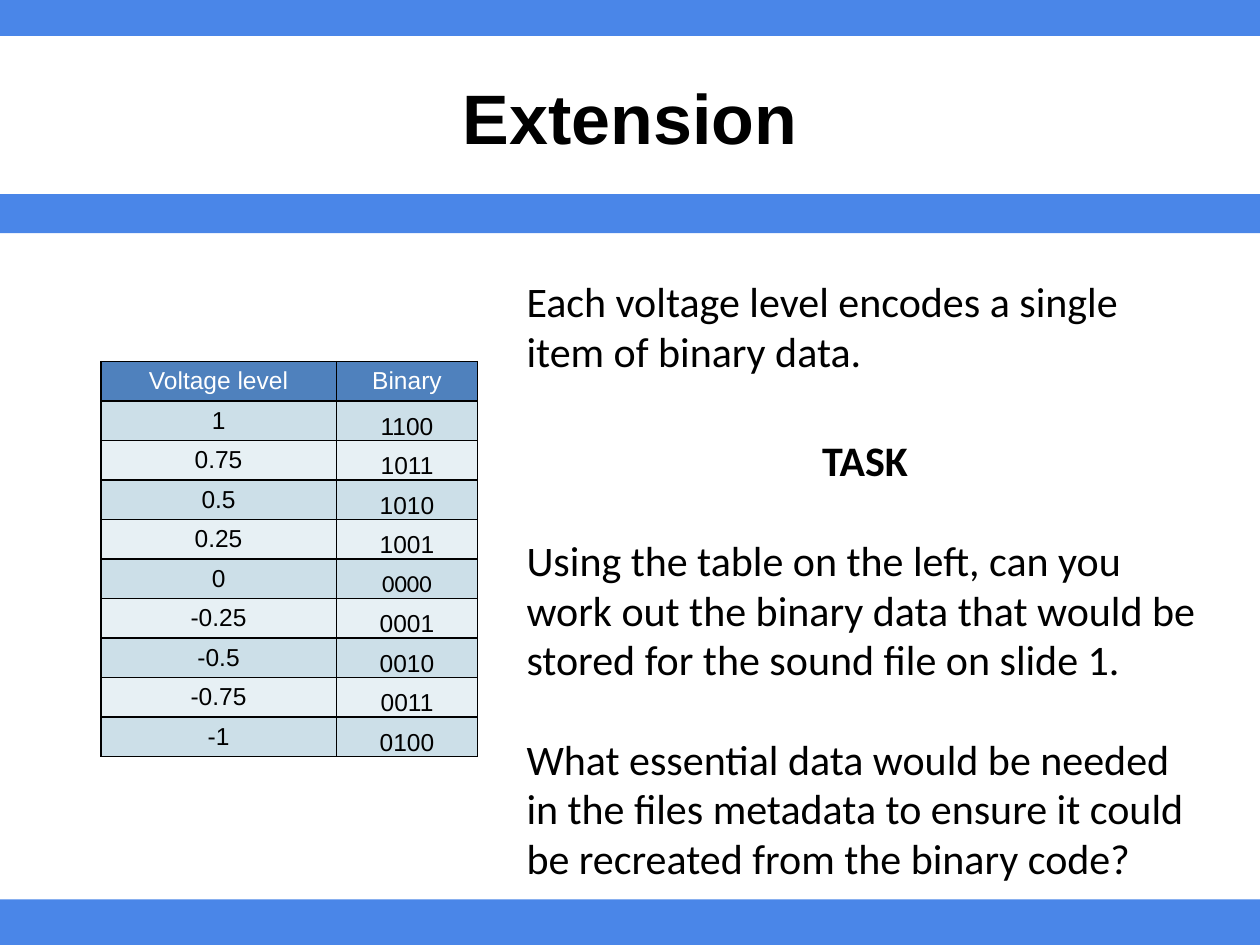
from lxml.etree import SubElement
from pptx import Presentation
from pptx.dml.color import RGBColor
from pptx.enum.shapes import MSO_SHAPE
from pptx.enum.text import MSO_ANCHOR, PP_ALIGN
from pptx.oxml.ns import qn
from pptx.util import Pt

BLUE = RGBColor(0x4A, 0x86, 0xE8)
HEAD = RGBColor(0x4F, 0x81, 0xBD)
DARK = RGBColor(0xCC, 0xDF, 0xE8)
PALE = RGBColor(0xE7, 0xF0, 0xF4)
WHITE = RGBColor(0xFF, 0xFF, 0xFF)
BLACK = RGBColor(0, 0, 0)

LEVELS = [
    ("1", "1100"), ("0.75", "1011"), ("0.5", "1010"), ("0.25", "1001"),
    ("0", "0000"), ("-0.25", "0001"), ("-0.5", "0010"), ("-0.75", "0011"),
    ("-1", "0100"),
]
LINE = 28.8  # height of one body line


def write(para, text, font="Arial", size=14, color=BLACK, bold=False,
          align=PP_ALIGN.CENTER, before=0, spacing=None):
    para.alignment = align
    para.space_before = Pt(before)
    para.space_after = Pt(0)
    if spacing:
        para.line_spacing = spacing
    run = para.add_run()
    run.text = text
    run.font.name = font
    run.font.size = Pt(size)
    run.font.bold = bold
    run.font.color.rgb = color


def inset(item, left, top, right, bottom):
    item.margin_left, item.margin_top = Pt(left), Pt(top)
    item.margin_right, item.margin_bottom = Pt(right), Pt(bottom)


def edge(cell, width=1):
    props = cell._tc.get_or_add_tcPr()
    for spot, side in enumerate(("lnL", "lnR", "lnT", "lnB")):
        line = SubElement(props, qn(f"a:{side}"), w=str(Pt(width)))
        fill = SubElement(line, qn("a:solidFill"))
        SubElement(fill, qn("a:srgbClr"), val=str(BLACK))
        props.insert(spot, line)


class Deck:
    def __init__(self, slide):
        self.slide = slide
        self.shapes = slide.shapes

    def ground(self, color):
        fill = self.slide.background.fill
        fill.solid()
        fill.fore_color.rgb = color

    def block(self, kind, box, color):
        shape = self.shapes.add_shape(kind, *map(Pt, box))
        shape.shadow.inherit = False
        shape.fill.solid()
        shape.fill.fore_color.rgb = color
        shape.line.fill.background()
        return shape

    def title(self, text, box):
        title = self.shapes.title
        title.left, title.top, title.width, title.height = map(Pt, box)
        frame = title.text_frame
        frame.vertical_anchor = MSO_ANCHOR.MIDDLE
        inset(frame, 7.2, 7.2, 7.2, 7.2)
        write(frame.paragraphs[0], text, size=40, bold=True)
        # Lift the title above the bands
        title.element.getparent().append(title.element)

    def text(self, box, paras):
        frame = self.shapes.add_textbox(*map(Pt, box)).text_frame
        frame.word_wrap = True
        inset(frame, 7.2, 7.2, 7.2, 7.2)
        for spot, (text, style) in enumerate(paras):
            para = frame.add_paragraph() if spot else frame.paragraphs[0]
            write(para, text, **{"font": "Calibri", "size": 24,
                                 "align": PP_ALIGN.LEFT, "spacing": 0.98,
                                 **style})

    def table(self, left, top, widths, height, rows):
        grid = self.shapes.add_table(
            len(rows), len(widths), Pt(left), Pt(top),
            Pt(sum(widths)), Pt(height * len(rows))).table
        for col, width in zip(grid.columns, widths):
            col.width = Pt(width)
        for r, row in enumerate(rows):
            fill = HEAD if r == 0 else DARK if r % 2 else PALE
            for c, text in enumerate(row):
                self.cell(grid.cell(r, c), text, fill, low=r > 0 and c == 1)

    def cell(self, cell, text, fill, low):
        cell.fill.solid()
        cell.fill.fore_color.rgb = fill
        if low:
            inset(cell, 0.7, 0.7, 0.7, 0)
            cell.vertical_anchor = MSO_ANCHOR.BOTTOM
        else:
            inset(cell, 7.2, 3.24, 7.2, 3.24)
        write(cell.text_frame.paragraphs[0], text,
              font="Calibri" if text == "0000" else "Arial",
              color=WHITE if fill == HEAD else BLACK)
        edge(cell)


def main():
    show = Presentation()
    show.slide_width, show.slide_height = Pt(720), Pt(540)
    deck = Deck(show.slides.add_slide(show.slide_layouts[5]))

    # White page between blue bands
    deck.ground(BLUE)
    page = deck.block(MSO_SHAPE.ROUNDED_RECTANGLE, (0, 20.7, 720, 493.2), WHITE)
    page.adjustments[0] = 0
    deck.block(MSO_SHAPE.RECTANGLE, (0, 110.9, 721.4, 22.3), BLUE)
    deck.title("Extension", (119.5, 22.3, 481, 88.6))

    # Voltage table
    deck.table(57.6, 206.7, (134.6, 80.8), 22.57,
               [("Voltage level", "Binary")] + LEVELS)

    # Task
    deck.text((293.8, 151.9, 401, 340.6), [
        ("Each voltage level encodes a single item of binary data.", {}),
        ("TASK", {"bold": True, "align": PP_ALIGN.CENTER,
                  "before": LINE + 5.6}),
        ("Using the table on the left, can you work out the binary data "
         "that would be stored for the sound file on slide 1.",
         {"before": LINE}),
        ("What essential data would be needed in the files metadata to "
         "ensure it could be recreated from the binary code?",
         {"before": LINE}),
    ])
    show.save("out.pptx")


if __name__ == "__main__":
    main()
